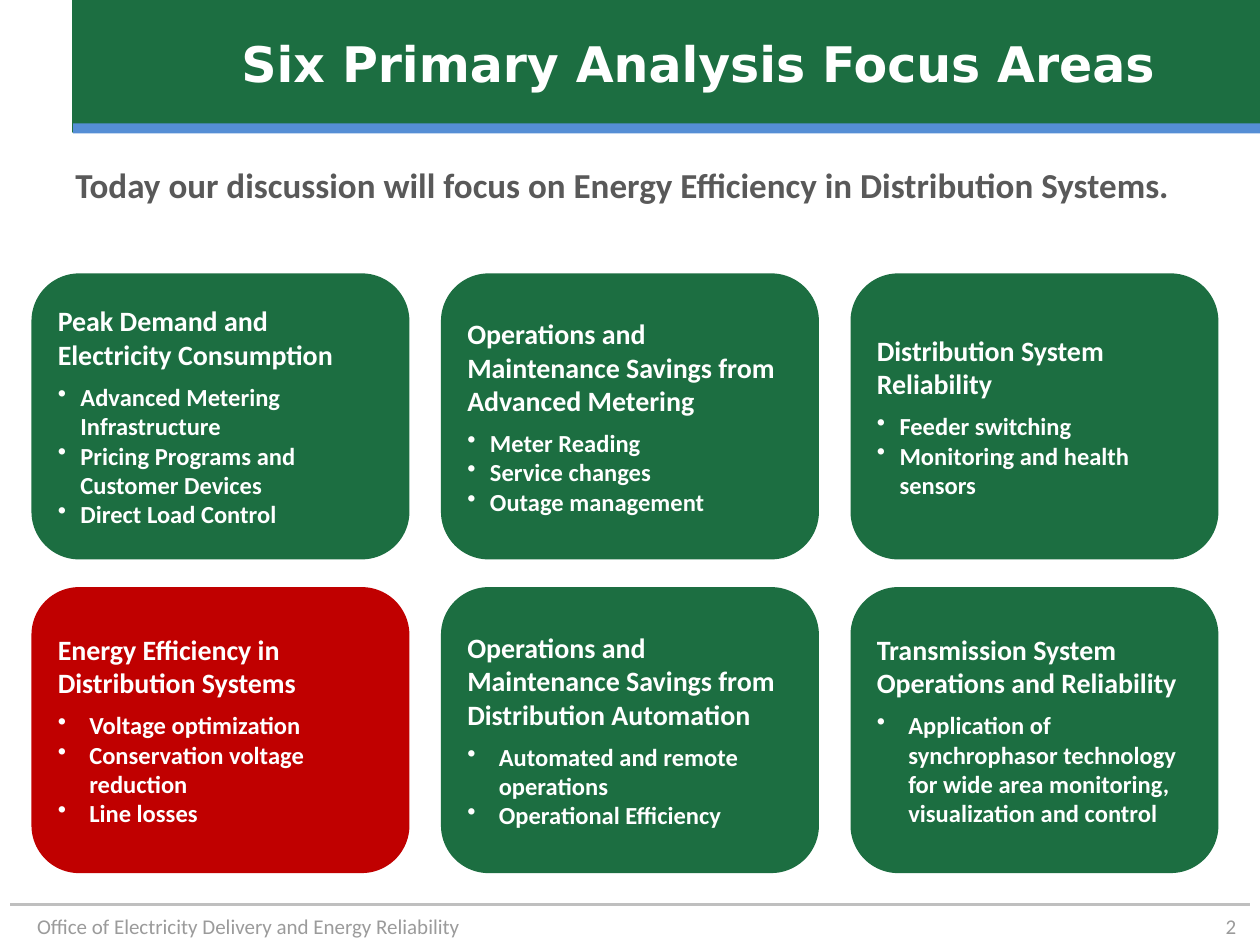
"""Build the slide on the six primary analysis focus areas."""
from dataclasses import dataclass

import lxml.etree
import pptx
import pptx.dml.color
import pptx.enum.shapes
import pptx.enum.text
import pptx.oxml.ns
import pptx.util

SHAPE = pptx.enum.shapes.MSO_SHAPE
ALIGN = pptx.enum.text.PP_ALIGN
ANCHOR = pptx.enum.text.MSO_ANCHOR
INCH = pptx.util.Inches
POINT = pptx.util.Pt


@dataclass(frozen=True)
class Theme:
    """Colours, fonts and type sizes of the slide."""
    green: str = "1C6E41"
    red: str = "C00000"
    blue: str = "558ED5"
    rule: str = "BFBFBF"
    white: str = "FFFFFF"
    body: str = "595959"
    footer: str = "9B9B9B"
    font: str = "Calibri"
    title_font: str = "DejaVu Sans"
    title_size: int = 28
    lead_size: int = 20
    heading_size: int = 16
    item_size: int = 14
    footer_size: int = 12


@dataclass(frozen=True)
class Grid:
    """Origin, steps and card sizes of the focus area grid."""
    left: float = 0.25
    top: float = 2.17
    column_step: float = 3.25
    row_step: float = 2.49
    widths: tuple = (3, 3, 2.92)
    height: float = 2.27

    def cell(self, row, column):
        """Return left, top, width and height of one cell."""
        return (self.left + column * self.column_step,
                self.top + row * self.row_step,
                self.widths[column], self.height)


THEME = Theme()
GRID = Grid()
ROW_INDENTS = (0.18, 0.25)
FOCUS_ROW = [
    [("Peak Demand and Electricity Consumption",
      ["Advanced Metering Infrastructure",
       "Pricing Programs and Customer Devices",
       "Direct Load Control"], THEME.green),
     ("Operations and Maintenance Savings from Advanced Metering",
      ["Meter Reading", "Service changes", "Outage management"], THEME.green),
     ("Distribution System Reliability",
      ["Feeder switching", "Monitoring and health sensors"], THEME.green)],
    [("Energy Efficiency in Distribution Systems",
      ["Voltage optimization", "Conservation voltage reduction",
       "Line losses"], THEME.red),
     ("Operations and Maintenance Savings from Distribution Automation",
      ["Automated and remote operations", "Operational Efficiency"],
      THEME.green),
     ("Transmission System Operations and Reliability",
      ["Application of synchrophasor technology for wide area monitoring, "
       "visualization and control"], THEME.green)],
]


def rgb(value):
    """Turn a hex string into a colour."""
    return pptx.dml.color.RGBColor.from_string(value)


def inches(lengths):
    """Turn numbers into lengths in inches."""
    return [INCH(length) for length in lengths]


def write(para, text, size, color, bold=True, font=THEME.font,
          align=ALIGN.LEFT, after=0, bullet_indent=None):
    """Write formatted text into a paragraph."""
    para.alignment = align
    para.space_after = POINT(after)
    if bullet_indent:
        properties = para._p.get_or_add_pPr()
        properties.set("marL", str(INCH(bullet_indent)))
        properties.set("indent", str(-INCH(bullet_indent)))
        bullet = lxml.etree.SubElement(properties, pptx.oxml.ns.qn("a:buChar"))
        bullet.set("char", "•")
    span = para.add_run()
    span.text = text
    span.font.size = POINT(size)
    span.font.bold = bold
    span.font.name = font
    span.font.color.rgb = rgb(color)


def add_panel(page, kind, place, fill):
    """Add a filled shape without outline or shadow."""
    panel = page.shapes.add_shape(kind, *inches(place))
    panel.shadow.inherit = False
    panel.fill.solid()
    panel.fill.fore_color.rgb = rgb(fill)
    panel.line.fill.background()
    return panel


def add_text(page, place, text, anchor=ANCHOR.TOP, **style):
    """Add a wrapped text box with one paragraph."""
    box = page.shapes.add_textbox(*inches(place))
    box.text_frame.word_wrap = True
    box.text_frame.vertical_anchor = anchor
    write(box.text_frame.paragraphs[0], text, **style)


def add_rule(page, start, end):
    """Add the straight rule above the footer."""
    rule = page.shapes.add_connector(
        pptx.enum.shapes.MSO_CONNECTOR.STRAIGHT, *inches(start + end))
    rule.line.color.rgb = rgb(THEME.rule)
    rule.line.width = POINT(1.75)
    lxml.etree.SubElement(rule._element.spPr, pptx.oxml.ns.qn("a:effectLst"))


def add_header(page):
    """Add the title band and set the title on top of it."""
    band = add_panel(page, SHAPE.RECTANGLE, (0.58, 0, 9.42, 1.05), THEME.green)
    band.line.color.rgb = rgb(THEME.green)
    band.line.width = POINT(1)
    add_panel(page, SHAPE.RECTANGLE, (0.58, 0.98, 9.42, 0.08), THEME.blue)
    title = page.shapes.title
    title.left, title.top, title.width, title.height = inches((1.08, 0, 8.92, 1))
    title.text_frame.vertical_anchor = ANCHOR.MIDDLE
    write(title.text_frame.paragraphs[0], "Six Primary Analysis Focus Areas",
          THEME.title_size, THEME.white, font=THEME.title_font,
          align=ALIGN.CENTER)
    title.element.getparent().append(title.element)


def add_card(page, place, heading, items, fill, indent):
    """Add a rounded card with a heading and its bullets."""
    card = add_panel(page, SHAPE.ROUNDED_RECTANGLE, place, fill)
    frame = card.text_frame
    frame.word_wrap = True
    frame.vertical_anchor = ANCHOR.MIDDLE
    frame.margin_left = frame.margin_right = INCH(0.1)
    frame.margin_top = frame.margin_bottom = INCH(0.1)
    write(frame.paragraphs[0], heading, THEME.heading_size, THEME.white, after=6)
    for item in items:
        write(frame.add_paragraph(), item, THEME.item_size, THEME.white,
              bullet_indent=indent)


def add_footer(page):
    """Add the rule, the office name and the page number."""
    style = dict(size=THEME.footer_size, color=THEME.footer, bold=False,
                 align=ALIGN.RIGHT)
    add_rule(page, (0.08, 7.18), (9.92, 7.18))
    add_text(page, (0, 7.2, 3.75, 0.3),
             "Office of Electricity Delivery and Energy Reliability", **style)
    add_text(page, (7.58, 7.2, 2.33, 0.3), "2", anchor=ANCHOR.MIDDLE, **style)


def main():
    """Build and save the deck."""
    deck = pptx.Presentation()
    deck.slide_width, deck.slide_height = inches((10, 7.5))
    page = deck.slides.add_slide(deck.slide_layouts.get_by_name("Title Only"))
    add_header(page)
    add_text(page, (0.5, 1.25, 9, 0.67),
             "Today our discussion will focus on Energy Efficiency in "
             "Distribution Systems.", size=THEME.lead_size, color=THEME.body)
    for row, (areas, indent) in enumerate(zip(FOCUS_ROW, ROW_INDENTS)):
        for column, (heading, items, fill) in enumerate(areas):
            add_card(page, GRID.cell(row, column), heading, items, fill, indent)
    add_footer(page)
    deck.save("out.pptx")


if __name__ == "__main__":
    main()
